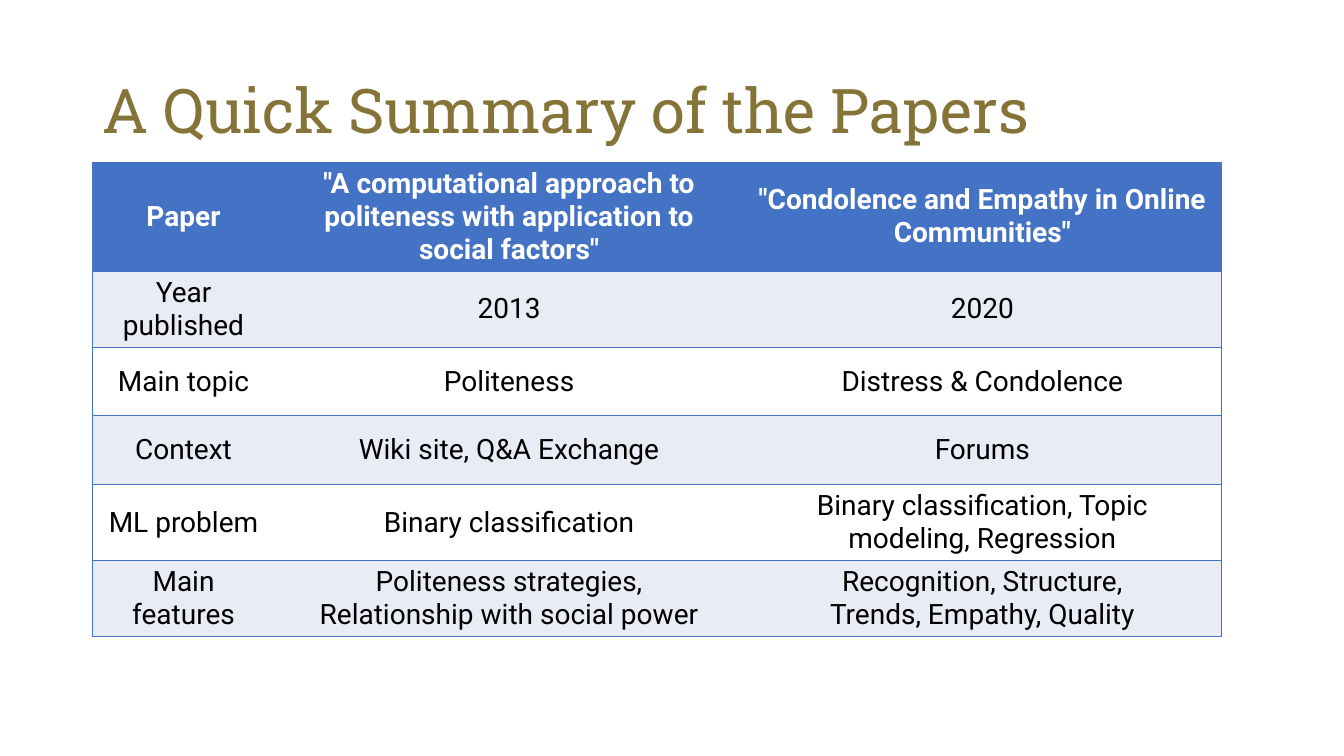
from pptx import Presentation
from pptx.dml.color import RGBColor
from pptx.enum.text import MSO_ANCHOR as Anchor, MSO_AUTO_SIZE as Fit, PP_ALIGN as Align
from pptx.oxml.ns import qn
from pptx.util import Pt
from lxml.etree import SubElement as Sub

GOLD = RGBColor(0x85, 0x74, 0x37)
BLUE = RGBColor(0x44, 0x72, 0xC4)
PALE = RGBColor(0xE9, 0xEB, 0xF5)
WHITE = RGBColor(0xFF, 0xFF, 0xFF)
BLACK = RGBColor(0, 0, 0)

WIDTHS = [130.3, 334.8, 341.3]
HEIGHT = 49
ROWS = [
    ["Paper",
     '"A computational approach to politeness with application to social factors"',
     '"Condolence and Empathy in Online Communities"'],
    ["Year published", "2013", "2020"],
    ["Main topic", "Politeness", "Distress & Condolence"],
    ["Context", "Wiki site, Q&A Exchange", "Forums"],
    ["ML problem", "Binary classification",
     "Binary classification, Topic modeling, Regression"],
    ["Main features",
     "Politeness strategies,\nRelationship with social power",
     "Recognition, Structure,\nTrends, Empathy, Quality"],
]


def style(para, face, size, color, bold=False):
    for run in para.runs:
        font = run.font
        font.name, font.size, font.bold = face, Pt(size), bold
        font.color.rgb = color


def add_edges(cell, shown):
    """Draw the cell's borders named in shown and clear the others."""
    props = cell._tc.get_or_add_tcPr()
    for side in "LRTB":
        line = Sub(props, qn("a:ln" + side), w=str(Pt(1)))
        if side in shown:
            fill = Sub(line, qn("a:solidFill"))
            Sub(fill, qn("a:srgbClr"), val=str(BLUE))
        else:
            Sub(line, qn("a:noFill"))


deck = Presentation()
deck.slide_width, deck.slide_height = Pt(960), Pt(540)
slide = deck.slides.add_slide(deck.slide_layouts[5])

title = slide.shapes.title
title.left, title.top, title.width, title.height = Pt(66), Pt(29), Pt(720), Pt(104)
frame = title.text_frame
frame.text = "A Quick Summary of the Papers"
frame.auto_size = Fit.NONE
frame.vertical_anchor = Anchor.MIDDLE
para = frame.paragraphs[0]
para.alignment = Align.LEFT
para.line_spacing = 0.9
style(para, "Roboto Slab", 44, GOLD)

table = slide.shapes.add_table(
    len(ROWS), len(WIDTHS), Pt(66), Pt(116),
    Pt(sum(WIDTHS)), Pt(HEIGHT * len(ROWS))).table
table.horz_banding = False
for col, width in zip(table.columns, WIDTHS):
    col.width = Pt(width)

last = len(WIDTHS) - 1
for r, row in enumerate(ROWS):
    table.rows[r].height = Pt(HEIGHT)
    head = r == 0
    back = BLUE if head else PALE if r % 2 else WHITE
    for c, text in enumerate(row):
        cell = table.cell(r, c)
        add_edges(cell, "TB" + ("L" if c == 0 else "R" if c == last else ""))
        cell.fill.solid()
        cell.fill.fore_color.rgb = back
        cell.vertical_anchor = Anchor.MIDDLE
        para = cell.text_frame.paragraphs[0]
        para.text = text
        para.alignment = Align.CENTER
        style(para, "Roboto", 20, WHITE if head else BLACK, head)

deck.save("out.pptx")
